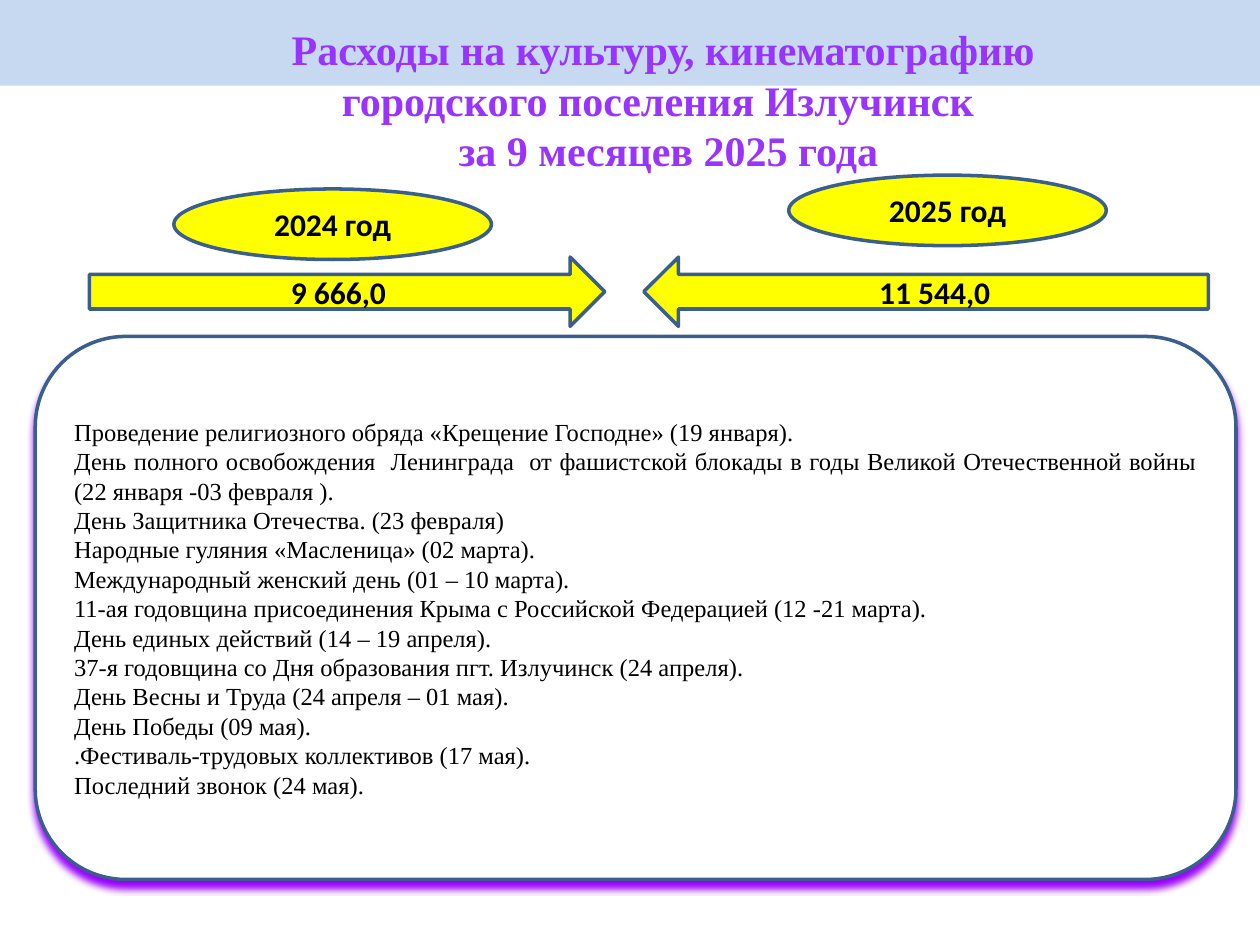
from dataclasses import dataclass

from lxml.etree import SubElement
from pptx import Presentation
from pptx.dml.color import RGBColor
from pptx.enum.shapes import MSO_SHAPE as Shape
from pptx.enum.text import MSO_ANCHOR as Anchor, PP_ALIGN as Align
from pptx.oxml.ns import qn
from pptx.util import Emu, Inches, Pt

COLORS = {
    "band": "C6D9F1",
    "title": "9933FF",
    "yellow": "FFFF00",
    "border": "3A5F8C",
    "white": "FFFFFF",
    "black": "000000",
    "glow": "9900FF",
}
SERIF, SANS = "Times New Roman", "Calibri"

TITLE = [
    "Расходы на культуру, кинематографию ",
    "городского поселения Излучинск  ",
    "за 9 месяцев 2025 года",
]
EVENTS = [
    "Проведение религиозного обряда «Крещение Господне» (19 января).",
    "День полного освобождения  Ленинграда  от фашистской блокады в годы "
    "Великой Отечественной войны (22 января -03 февраля ).",
    "День Защитника Отечества. (23 февраля)",
    "Народные гуляния «Масленица» (02 марта).",
    "Международный женский день (01 – 10 марта).",
    "11-ая годовщина присоединения Крыма с Российской Федерацией (12 -21 марта).",
    "День единых действий (14 – 19 апреля).",
    "37-я годовщина со Дня образования пгт. Излучинск (24 апреля).",
    "День Весны и Труда (24 апреля – 01 мая).",
    "День Победы (09 мая).",
    ".Фестиваль-трудовых коллективов (17 мая).",
    "Последний звонок (24 мая).",
]


@dataclass
class Box:
    left: float
    top: float
    width: float
    height: float

    def lengths(self) -> list[Emu]:
        return [Inches(v) for v in (self.left, self.top, self.width, self.height)]


@dataclass
class Style:
    font: str
    size: int
    color: str = "black"
    bold: bool = False
    align: Align = Align.CENTER


@dataclass
class Badge:
    kind: Shape
    box: Box
    text: str
    flipped: bool = False


BADGES = [
    Badge(Shape.RIGHT_ARROW, Box(0.71, 2.04, 4.09, 0.55), "9 666,0"),
    Badge(Shape.RIGHT_ARROW, Box(5.11, 2.04, 4.48, 0.55), "11 544,0", flipped=True),
    Badge(Shape.OVAL, Box(1.38, 1.5, 2.52, 0.56), "2024 год"),
    Badge(Shape.OVAL, Box(6.26, 1.39, 2.52, 0.56), "2025 год"),
]


def rgb(name: str) -> RGBColor:
    return RGBColor.from_string(COLORS[name])


def write(tf, lines: list[str], style: Style, anchor: Anchor = Anchor.MIDDLE) -> None:
    tf.word_wrap = True
    tf.vertical_anchor = anchor
    for i, line in enumerate(lines):
        p = tf.add_paragraph() if i else tf.paragraphs[0]
        p.alignment = style.align
        r = p.add_run()
        r.text = line
        r.font.name, r.font.size, r.font.bold = style.font, Pt(style.size), style.bold
        r.font.color.rgb = rgb(style.color)


def add_filled(slide, kind: Shape, box: Box, fill: str, border: str | None = None):
    sp = slide.shapes.add_shape(kind, *box.lengths())
    sp.shadow.inherit = False
    sp.fill.solid()
    sp.fill.fore_color.rgb = rgb(fill)
    if border:
        sp.line.color.rgb = rgb(border)
        sp.line.width = Pt(2)
    else:
        sp.line.fill.background()
    return sp


def add_badge(slide, badge: Badge) -> None:
    sp = add_filled(slide, badge.kind, badge.box, "yellow", "border")
    if badge.flipped:
        sp._element.spPr.find(qn("a:xfrm")).set("flipH", "1")
    write(sp.text_frame, [badge.text], Style(SANS, 18, bold=True))


def add_glow_below(sp) -> None:
    """Give the shape a soft coloured shadow straight downwards."""
    effects = sp._element.spPr.find(qn("a:effectLst"))
    shadow = SubElement(effects, qn("a:outerShdw"), blurRad=str(Pt(4)), dist=str(Pt(4)),
                        dir=str(90 * 60000), algn="t", rotWithShape="0")
    SubElement(shadow, qn("a:srgbClr"), val=COLORS["glow"])


def main() -> None:
    prs = Presentation()
    prs.slide_width, prs.slide_height = Inches(10), Inches(7.5)
    s = prs.slides.add_slide(prs.slide_layouts[6])

    add_filled(s, Shape.RECTANGLE, Box(0, 0, 10, 0.68), "band")
    title = s.shapes.add_textbox(*Box(1.04, 0.14, 8.53, 1.25).lengths())
    write(title.text_frame, TITLE, Style(SERIF, 24, "title", bold=True), Anchor.TOP)

    for badge in BADGES:
        add_badge(s, badge)

    panel = add_filled(s, Shape.ROUNDED_RECTANGLE, Box(0.28, 2.67, 9.53, 4.31), "white", "border")
    add_glow_below(panel)
    write(panel.text_frame, EVENTS, Style(SERIF, 14, align=Align.JUSTIFY))

    prs.save("out.pptx")


if __name__ == "__main__":
    main()
